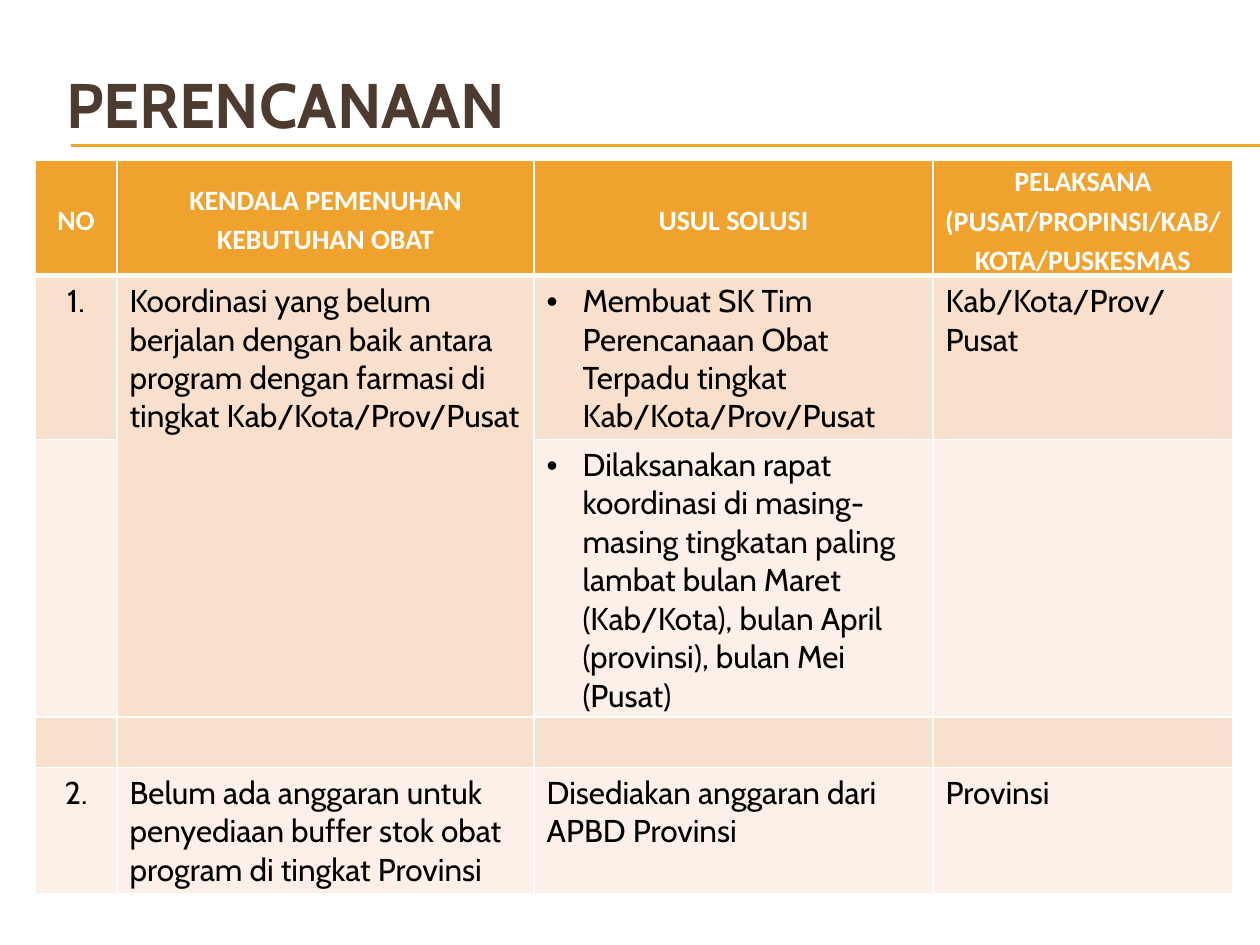
from pptx import Presentation
from pptx.dml.color import RGBColor as Color
from pptx.enum.shapes import MSO_CONNECTOR as Connector
from pptx.enum.text import MSO_ANCHOR as Anchor, PP_ALIGN as Align
from pptx.oxml.ns import qn
from pptx.util import Pt
from lxml.etree import SubElement

COLORS = {"orange": "F0A22E", "brown": "4E3B30", "peach": "F9E0CD",
          "cream": "FCF0E8", "white": "FFFFFF", "black": "000000"}
HEADER = {"size": Pt(16), "name": "Calibri", "bold": True}
BODY = {"size": Pt(18), "name": "Cabin", "bold": False}
TITLE = {"size": Pt(36), "name": "Cabin", "bold": True}


def px(count):
    return round(count * 914400 / 126)


def write(para, text, style, color):
    span = para.add_run()
    span.text = text
    for key, value in style.items():
        setattr(span.font, key, value)
    span.font.color.rgb = Color.from_string(COLORS[color])


deck = Presentation()
deck.slide_width, deck.slide_height = px(1260), px(945)
page = deck.slides.add_slide(deck.slide_layouts[6])

for y in (145, 146):
    rule = page.shapes.add_connector(Connector.STRAIGHT, px(71), px(y), px(1260), px(y))
    rule.line.color.rgb = Color.from_string(COLORS["orange"])
    rule.line.width = Pt(0.75)
    SubElement(rule._element.spPr, qn("a:effectLst"))

box = page.shapes.add_textbox(px(54), px(45), px(1197), px(116))
box.text_frame.word_wrap = True
box.text_frame.vertical_anchor = Anchor.MIDDLE
write(box.text_frame.paragraphs[0], "PERENCANAAN", TITLE, "brown")

rows = [
    ["NO", "KENDALA PEMENUHAN KEBUTUHAN OBAT", "USUL SOLUSI",
     "PELAKSANA (PUSAT/PROPINSI/KAB/KOTA/PUSKESMAS"],
    ["1.", "Koordinasi yang belum berjalan dengan baik antara program dengan farmasi "
     "di tingkat Kab/Kota/Prov/Pusat",
     "Membuat SK Tim Perencanaan Obat Terpadu tingkat Kab/Kota/Prov/Pusat",
     "Kab/Kota/Prov/Pusat"],
    ["", "", "Dilaksanakan rapat koordinasi di masing-masing tingkatan paling lambat "
     "bulan Maret (Kab/Kota), bulan April (provinsi), bulan Mei (Pusat)", ""],
    ["", "", "", ""],
    ["2.", "Belum ada anggaran untuk penyediaan buffer stok obat program di tingkat Provinsi",
     "Disediakan anggaran dari APBD Provinsi", "Provinsi"],
]
widths = [82, 417, 399, 300]
heights = [111, 156, 265, 49, 120]
frame = page.shapes.add_table(len(rows), len(widths), px(35), px(160), px(1198), px(733))
table = frame.table
table.horz_banding = False
for column, width in zip(table.columns, widths):
    column.width = px(width)
for row, height in zip(table.rows, heights):
    row.height = px(height)
frame.height = px(733)
table.cell(1, 1).merge(table.cell(2, 1))

for r, texts in enumerate(rows):
    for c, text in enumerate(texts):
        cell = table.cell(r, c)
        header = r == 0
        props = cell._tc.get_or_add_tcPr()
        for side in ("L", "R", "T", "B"):
            thick = (r, side) in ((0, "B"), (1, "T"))
            border = SubElement(props, qn(f"a:ln{side}"), w=str(Pt(3 if thick else 1)))
            paint = SubElement(border, qn("a:solidFill"))
            SubElement(paint, qn("a:srgbClr"), val=COLORS["white"])
        band = "orange" if header else "peach" if r % 2 else "cream"
        cell.fill.solid()
        cell.fill.fore_color.rgb = Color.from_string(COLORS[band])
        para = cell.text_frame.paragraphs[0]
        if header:
            cell.vertical_anchor = Anchor.MIDDLE
            cell.margin_left = cell.margin_right = px(9)
            cell.margin_top = cell.margin_bottom = 0
            para.line_spacing = 1.15
        if header or c == 0:
            para.alignment = Align.CENTER
        if c == 2 and r in (1, 2):
            para.level = r - 1
            layout = para._p.get_or_add_pPr()
            layout.set("marL", str(px(36)))
            layout.set("indent", str(px(-36)))
            SubElement(layout, qn("a:buFont"), typeface="Arial")
            SubElement(layout, qn("a:buChar"), char="•")
        if text:
            write(para, text, HEADER if header else BODY, "white" if header else "black")

deck.save("out.pptx")
